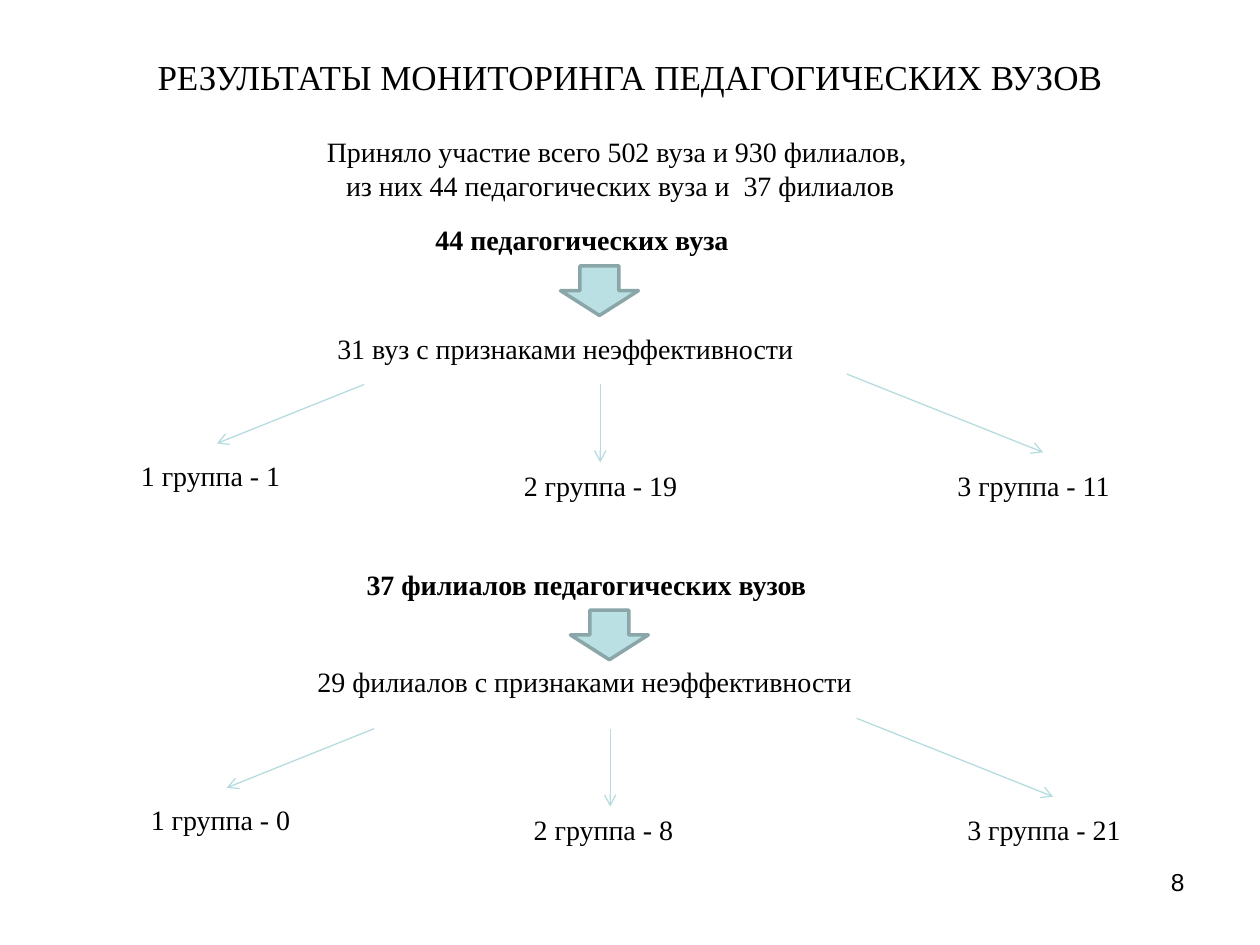
import pptx
import pptx.util
import pptx.dml.color
import pptx.enum.shapes
import pptx.enum.text
import pptx.oxml.ns
from dataclasses import dataclass
from lxml import etree

Cm, Pt = pptx.util.Cm, pptx.util.Pt
RGB = pptx.dml.color.RGBColor
Align = pptx.enum.text.PP_ALIGN


@dataclass(frozen=True)
class Theme:
    serif: str = "Times New Roman"
    sans: str = "Arial"
    ink: RGB = RGB(0x00, 0x00, 0x00)
    fill: RGB = RGB(0xBB, 0xE0, 0xE3)
    edge: RGB = RGB(0x8A, 0xA6, 0xA8)
    line: RGB = RGB(0xB6, 0xDC, 0xDF)
    title: int = 20
    body: int = 16
    page: int = 14


THEME = Theme()


def style(para, size, face=THEME.serif, bold=False, align=Align.LEFT):
    para.alignment = align
    font = para.font
    font.name, font.size, font.bold = face, Pt(size), bold
    font.color.rgb = THEME.ink


def label(slide, x, y, width, text, height=1.02, size=THEME.body, **look):
    box = slide.shapes.add_textbox(Cm(x), Cm(y), Cm(width), Cm(height))
    frame = box.text_frame
    frame.word_wrap = True
    frame.text = text
    for para in frame.paragraphs:
        style(para, size, **look)


def block(slide, x, y):
    kind = pptx.enum.shapes.MSO_SHAPE.DOWN_ARROW
    shape = slide.shapes.add_shape(kind, Cm(x), Cm(y), Cm(1.57), Cm(1))
    shape.shadow.inherit = False
    shape.fill.solid()
    shape.fill.fore_color.rgb = THEME.fill
    shape.line.color.rgb = THEME.edge
    shape.line.width = Pt(2)


def arrow(slide, x1, y1, x2, y2):
    kind = pptx.enum.shapes.MSO_CONNECTOR.STRAIGHT
    link = slide.shapes.add_connector(kind, Cm(x1), Cm(y1), Cm(x2), Cm(y2))
    link.line.color.rgb = THEME.line
    link.line.width = Pt(0.75)
    qn = pptx.oxml.ns.qn
    etree.SubElement(link.line._get_or_add_ln(), qn("a:tailEnd"), type="arrow")
    etree.SubElement(link._element.spPr, qn("a:effectLst"))


def tree(slide, dx, dy, head, state, counts):
    """Heading, block arrow, finding and three groups, shifted by dx, dy."""
    x, width, text = head
    label(slide, x, 4.37 + dy, width, text, bold=True)
    block(slide, 11.3 + dx, 5.36 + dy)
    label(slide, *state)

    # Arrows to the groups
    for x1, y1, x2, y2 in ((7.34, 7.75, 4.37, 8.94),
                           (12.1, 7.75, 12.1, 9.32),
                           (17.07, 7.54, 21.03, 9.12)):
        arrow(slide, x1 + dx, y1 + dy, x2 + dx, y2 + dy)

    # Group labels
    spots = ((2.59, 9.12), (10.31, 9.32), (19.05, 9.32))
    for num, ((x, y), count) in enumerate(zip(spots, counts), 1):
        label(slide, x + dx, y + dy, 4.04, f"{num} группа - {count}")


def main():
    deck = pptx.Presentation()
    deck.slide_width, deck.slide_height = Cm(25.4), Cm(19.05)
    slide = deck.slides.add_slide(deck.slide_layouts[5])

    # Title
    title = slide.shapes.title
    title.left, title.top = Cm(1.27), Cm(0.76)
    title.width, title.height = Cm(22.86), Cm(1.55)
    title.text_frame.text = "РЕЗУЛЬТАТЫ МОНИТОРИНГА ПЕДАГОГИЧЕСКИХ ВУЗОВ"
    title.text_frame.vertical_anchor = pptx.enum.text.MSO_ANCHOR.MIDDLE
    style(title.text_frame.paragraphs[0], THEME.title, align=Align.CENTER)

    # Summary
    label(slide, 5.56, 2.59, 13.89,
          "Приняло участие всего 502 вуза и 930 филиалов, \n"
          "из них 44 педагогических вуза и  37 филиалов",
          height=1.8, align=Align.CENTER)

    # Universities, then branches
    tree(slide, 0, 0, (8.53, 7.39, "44 педагогических вуза"),
         (6.55, 6.55, 11.02, "31 вуз с признаками неэффективности"),
         (1, 19, 11))
    tree(slide, 0.2, 6.94, (7.14, 10.77, "37 филиалов педагогических вузов"),
         (6.15, 13.28, 12.85, "29 филиалов с признаками неэффективности"),
         (0, 8, 21))

    # Page number
    label(slide, 18.21, 17.35, 5.92, "8", height=1.32, size=THEME.page,
          face=THEME.sans, align=Align.RIGHT)

    deck.save("out.pptx")


if __name__ == "__main__":
    main()
